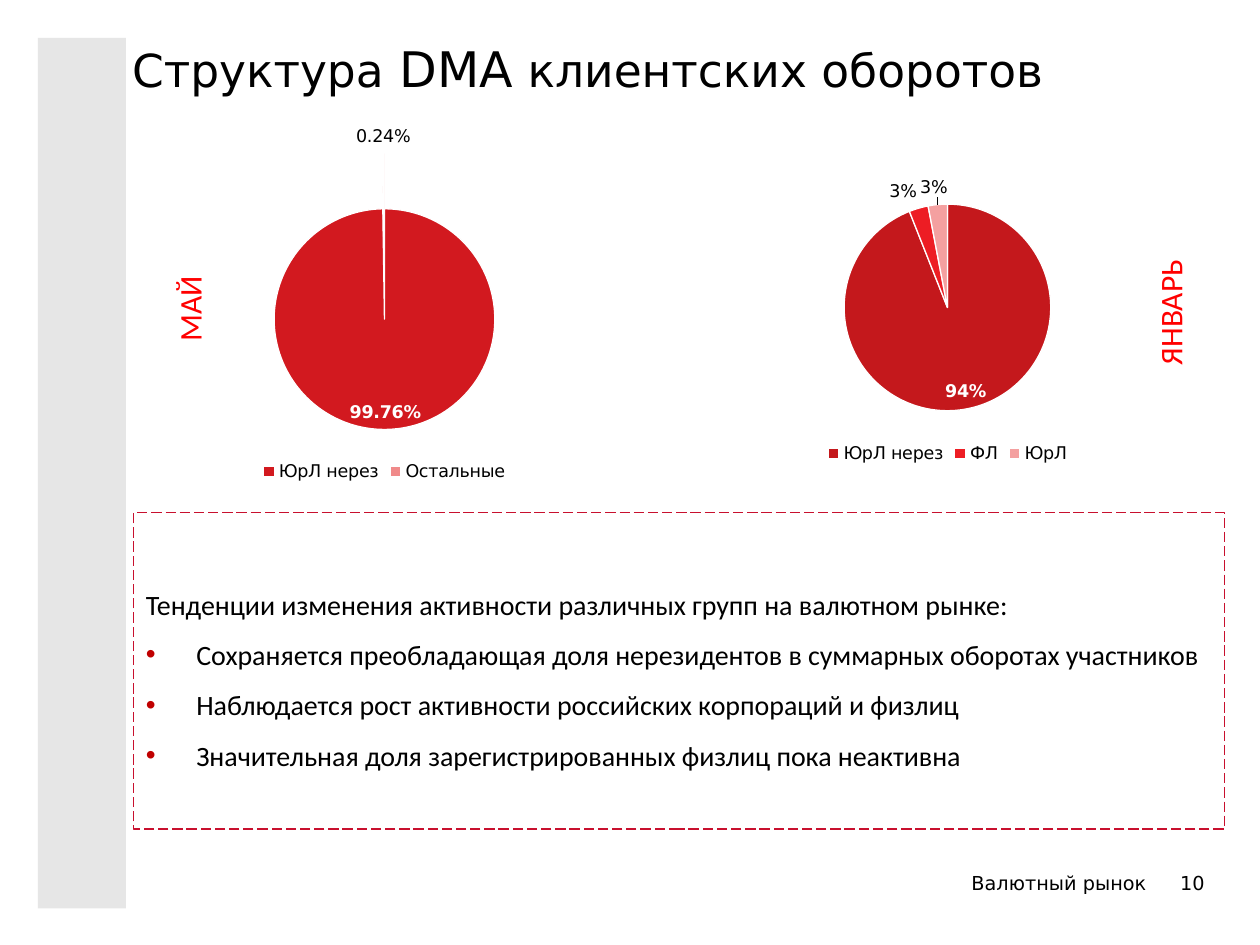
from lxml.etree import SubElement
from pptx import Presentation
from pptx.chart.data import CategoryChartData
from pptx.dml.color import RGBColor
from pptx.enum.chart import XL_CHART_TYPE, XL_LABEL_POSITION, XL_LEGEND_POSITION
from pptx.enum.dml import MSO_LINE
from pptx.enum.shapes import MSO_SHAPE
from pptx.enum.text import MSO_ANCHOR, MSO_AUTO_SIZE, PP_ALIGN
from pptx.oxml import parse_xml
from pptx.oxml.ns import nsdecls, qn
from pptx.util import Inches, Pt

HEX = {
    "black": "000000", "white": "FFFFFF", "gray": "E6E6E6",
    "red": "FF0000", "border": "C8102E", "bullet": "C00000",
    "may": "D2191F", "other": "F08A8A",
    "jan": "C4181C", "people": "ED1D24", "firms": "F4A0A0",
}
SANS, BODY = "DejaVu Sans", "Calibri"


def color(name):
    return RGBColor.from_string(HEX[name])


def style(font, face, size, hue="black"):
    font.name, font.size = face, Pt(size)
    font.color.rgb = color(hue)


def add_box(slide, x, y, w, h):
    return slide.shapes.add_textbox(Inches(x), Inches(y), Inches(w), Inches(h))


def add_bar(slide):
    bar = slide.shapes.add_shape(
        MSO_SHAPE.RECTANGLE, Inches(0.3), Inches(0.3), Inches(0.7), Inches(6.91))
    bar.shadow.inherit = False
    bar.fill.solid()
    bar.fill.fore_color.rgb = color("gray")
    bar.line.fill.background()


def add_title(slide, parts):
    frame = add_box(slide, 0.95, 0.26, 9.09, 0.9).text_frame
    frame.word_wrap = True
    for text, size in parts:
        run = frame.paragraphs[0].add_run()
        run.text = text
        style(run.font, SANS, size)


def add_footer(slide, text, x, w):
    frame = add_box(slide, x, 6.77, w, 0.39).text_frame
    frame.word_wrap = True
    frame.margin_left = frame.margin_right = 0
    para = frame.paragraphs[0]
    para.text = text
    para.alignment = PP_ALIGN.RIGHT
    para.line_spacing = 1.5
    style(para.font, SANS, 11)


def add_month(slide, text, x, y, w):
    box = add_box(slide, x, y, w, 0.4)
    box.rotation = 270
    frame = box.text_frame
    frame.word_wrap = False
    frame.auto_size = MSO_AUTO_SIZE.SHAPE_TO_FIT_TEXT
    para = frame.paragraphs[0]
    para.text = text
    style(para.font, BODY, 18, "red")


def make_layout(inner, **places):
    rows = "".join(f'<c:{tag} val="{val}"/>' for tag, val in places.items())
    return parse_xml(f'<c:layout {nsdecls("c")}><c:manualLayout>{inner}{rows}'
                     '</c:manualLayout></c:layout>')


def set_area(chart, area):
    """Place the plot by fractions of the chart: left, top, width, height."""
    plot = chart._chartSpace.chart.plotArea
    for old in plot.findall(qn("c:layout")):
        plot.remove(old)
    inner = ('<c:layoutTarget val="inner"/>'
             '<c:xMode val="edge"/><c:yMode val="edge"/>')
    plot.insert(0, make_layout(inner, **dict(zip("xywh", area))))


def set_labels(series, form, shifts):
    """Show percents outside, but the main share in white inside.

    shifts maps a point to its label's move right, as a fraction of the chart.
    """
    labels = series.data_labels
    labels.show_percentage, labels.show_value = True, False
    labels.number_format, labels.number_format_is_linked = form, False
    labels.position = XL_LABEL_POSITION.OUTSIDE_END
    style(labels.font, SANS, 10)
    for i in sorted({0, *shifts}):
        label = series.points[i].data_label
        style(label.font, SANS, 10, "black" if i else "white")
        label.font.bold = i == 0
        label.position = (XL_LABEL_POSITION.OUTSIDE_END if i
                          else XL_LABEL_POSITION.INSIDE_END)
    for node in series._element.findall(".//" + qn("c:dLbl")):
        node.find(qn("c:showVal")).set("val", "0")
        node.find(qn("c:showPercent")).set("val", "1")
        node.insert(1, parse_xml(
            f'<c:numFmt {nsdecls("c")} formatCode="{form}" sourceLinked="0"/>'))
        i = int(node.find(qn("c:idx")).get("val"))
        if i in shifts:
            node.insert(1, make_layout("", x=shifts[i], y=0))


def add_pie(slide, place, shares, form, area, burst=0, shifts={}):
    """Draw a pie of (category, value, color) shares."""
    data = CategoryChartData()
    data.categories = [name for name, _, _ in shares]
    data.add_series("Series 1", [val for _, val, _ in shares])
    chart = slide.shapes.add_chart(
        XL_CHART_TYPE.PIE, *map(Inches, place), data).chart
    style(chart.font, SANS, 10)
    chart.has_title = False
    chart.has_legend = True
    chart.legend.position = XL_LEGEND_POSITION.BOTTOM
    chart.legend.include_in_layout = False
    style(chart.legend.font, SANS, 10)
    chart.plots[0].vary_by_categories = True
    series = chart.plots[0].series[0]
    for i, (_, _, hue) in enumerate(shares):
        part = series.points[i].format
        part.fill.solid()
        part.fill.fore_color.rgb = color(hue)
        part.line.color.rgb = color("white")
        part.line.width = Pt(0.75)
    set_labels(series, form, shifts)
    if burst:
        node = parse_xml(f'<c:explosion {nsdecls("c")} val="{burst}"/>')
        series._element.find(qn("c:dPt")).addprevious(node)
    set_area(chart, area)


def add_bullet(para):
    props = para._p.get_or_add_pPr()
    props.set("marL", str(Inches(0.4)))
    props.set("indent", str(-Inches(0.4)))
    hue = SubElement(props, qn("a:buClr"))
    SubElement(hue, qn("a:srgbClr"), val=HEX["bullet"])
    SubElement(props, qn("a:buFont"), typeface="Arial")
    SubElement(props, qn("a:buChar"), char="•")


def add_notes(slide, lead, points):
    box = slide.shapes.add_shape(
        MSO_SHAPE.RECTANGLE, Inches(1.06), Inches(4.07), Inches(8.66), Inches(2.51))
    box.shadow.inherit = False
    box.fill.background()
    box.line.color.rgb = color("border")
    box.line.width = Pt(0.75)
    box.line.dash_style = MSO_LINE.LONG_DASH
    frame = box.text_frame
    frame.word_wrap = True
    frame.vertical_anchor = MSO_ANCHOR.MIDDLE
    for i, text in enumerate([lead, *points]):
        para = frame.add_paragraph() if i else frame.paragraphs[0]
        para.text = text
        para.alignment = PP_ALIGN.JUSTIFY
        para.line_spacing = 1.5
        if i:
            add_bullet(para)
        style(para.font, BODY, 16)


def main():
    deck = Presentation()
    deck.slide_width, deck.slide_height = Inches(10), Inches(7.5)
    slide = deck.slides.add_slide(deck.slide_layouts[6])
    add_bar(slide)
    add_footer(slide, "Валютный рынок", 3.27, 5.83)
    add_footer(slide, "10", 9.17, 0.39)
    add_title(slide, [("Структура", 26), (" DMA", 28), (" клиентских оборотов", 26)])
    add_pie(slide, (0.55, 0.86, 5, 3),
            [("ЮрЛ нерез", 99.76, "may"), ("Остальные", 0.24, "other")],
            "0.00%", (0.28, 0.12, 0.44, 0.73), burst=25)
    add_notes(slide, "Тенденции изменения активности различных групп на валютном рынке:", [
        "Сохраняется преобладающая доля нерезидентов в суммарных оборотах участников",
        "Наблюдается рост активности российских корпораций и физлиц",
        "Значительная доля зарегистрированных физлиц пока неактивна",
    ])
    add_pie(slide, (5.47, 1.26, 4.1, 2.46),
            [("ЮрЛ нерез", 94, "jan"), ("ФЛ", 3, "people"), ("ЮрЛ", 3, "firms")],
            "0%", (0.3, 0.14, 0.4, 0.68), shifts={0: 0.04, 2: 0.02})
    add_month(slide, "МАЙ", 1.14, 2.25, 0.72)
    add_month(slide, "ЯНВАРЬ", 8.67, 2.18, 1.23)
    deck.save("out.pptx")


if __name__ == "__main__":
    main()
